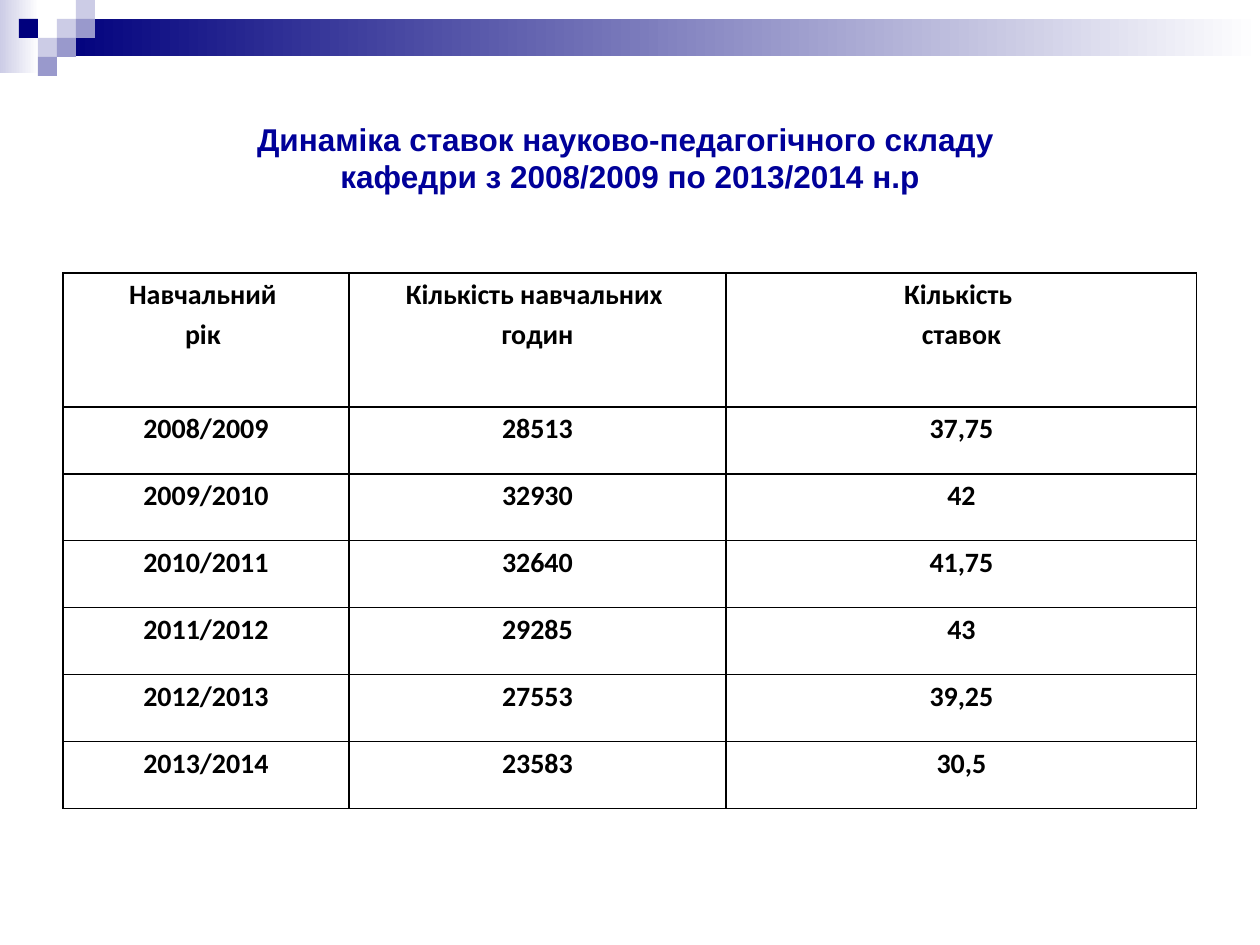
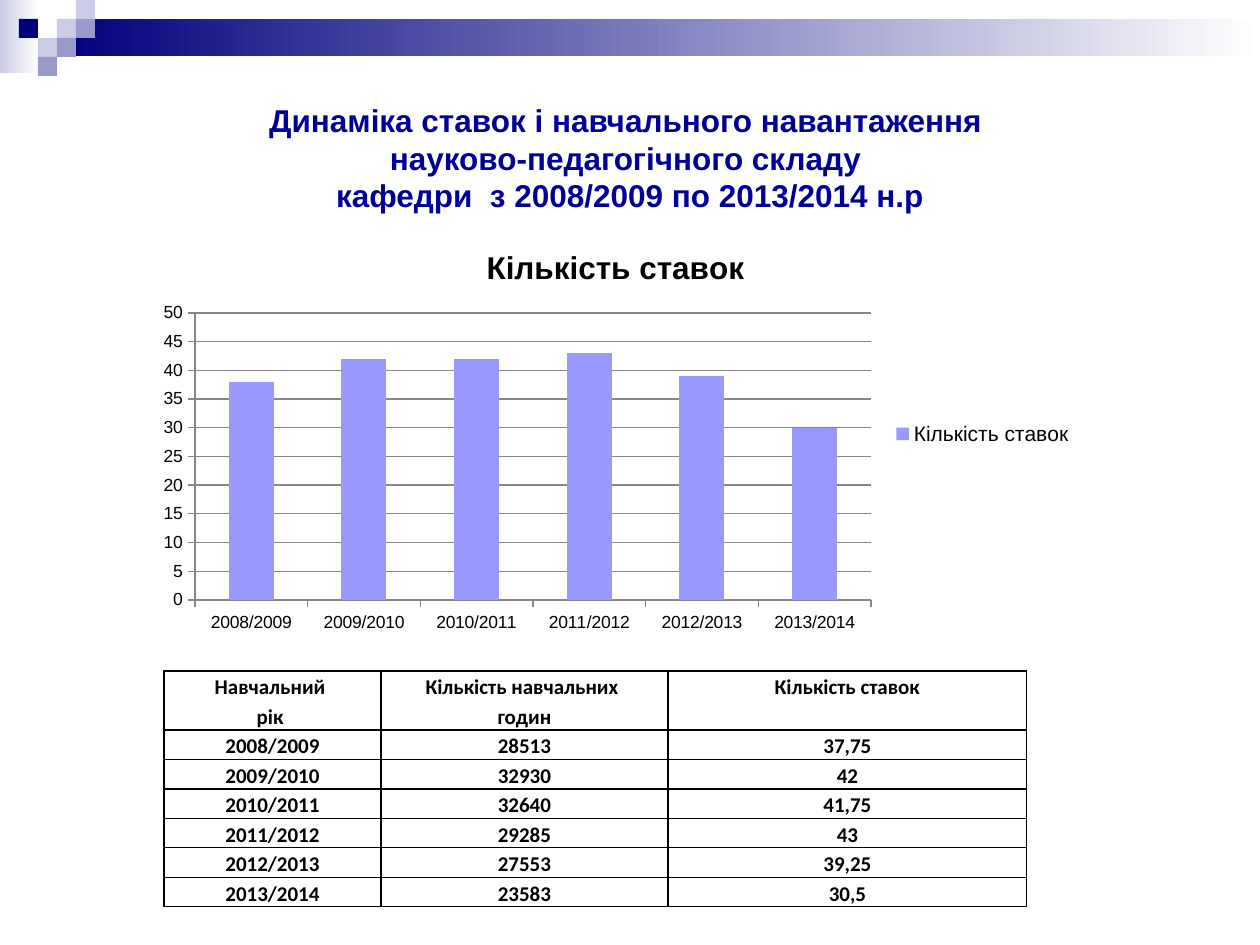
from pptx import Presentation, util as u
from pptx.chart.data import CategoryChartData
from pptx.dml.color import RGBColor
from pptx.enum import chart as ch, shapes, text
from pptx.oxml import parse_xml
from pptx.oxml.ns import nsdecls

PX = 914400 / 126
COLORS = {
    "white": "FFFFFF", "black": "000000", "navy": "00007D",
    "title": "000099", "pale": "CCCCE6", "mid": "9999CC",
    "bar": "9999FF", "grid": "868686",
}
UNIT = 19  # side of one square in the corner pattern
SQUARES = [  # column, row, colour
    (3, 1, "pale"), (4, 0, "pale"), (4, 1, "mid"), (2, 2, "pale"),
    (1, 1, "navy"), (3, 2, "mid"), (2, 3, "mid"),
]
YEARS = [
    ("2008/2009", "28513", "37,75"),
    ("2009/2010", "32930", "42"),
    ("2010/2011", "32640", "41,75"),
    ("2011/2012", "29285", "43"),
    ("2012/2013", "27553", "39,25"),
    ("2013/2014", "23583", "30,5"),
]
HEADS = [["Навчальний ", "рік "], ["Кількість навчальних ", "годин"]]
POSTS = [38, 42, 42, 43, 39, 30]
FRAME = (145, 226, 941, 416)  # chart
PLOT = (195, 313, 676, 287)  # inner plot area of the chart


def px(n):
    return u.Emu(round(n * PX))


def box(*sides):
    return [px(n) for n in sides]


def rgb(name):
    return RGBColor.from_string(COLORS[name])


def style(font, size, color, face="Arial", bold=False):
    font.name, font.size, font.bold = face, u.Pt(size), bold
    font.color.rgb = rgb(color)


def add_rect(slide, sides, color, fade=False):
    """Draw a rectangle, plain or fading to white at the right."""
    rect = slide.shapes.add_shape(shapes.MSO_SHAPE.RECTANGLE, *box(*sides))
    rect.shadow.inherit = False
    rect.line.fill.background()
    if fade:
        rect.fill.gradient()
        rect.fill.gradient_angle = 0
        for stop, name in zip(rect.fill.gradient_stops, (color, "white")):
            stop.color.rgb = rgb(name)
    else:
        rect.fill.solid()
        rect.fill.fore_color.rgb = rgb(color)


def add_band(slide):
    add_rect(slide, (0, 0, 39, 73), "pale", fade=True)
    add_rect(slide, (3 * UNIT, UNIT, 1203, 2 * UNIT - 1), "navy", fade=True)
    for col, row, color in SQUARES:
        add_rect(slide, (col * UNIT, row * UNIT, UNIT, UNIT), color)


def add_title(slide, lines):
    frame = slide.shapes.add_textbox(*box(63, 63, 1134, 189)).text_frame
    frame.word_wrap = True
    frame.vertical_anchor = text.MSO_ANCHOR.MIDDLE
    para = frame.paragraphs[0]
    para.alignment = text.PP_ALIGN.CENTER
    for i, line in enumerate(lines):
        if i:
            para.add_line_break()
        run = para.add_run()
        run.text = line
        style(run.font, 18, "title", bold=True)


def add_edges(cell):
    """Give a cell a thin black line on all four sides."""
    props = cell._tc.get_or_add_tcPr()
    for i, side in enumerate(("lnL", "lnR", "lnT", "lnB")):
        props.insert(i, parse_xml(
            f'<a:{side} {nsdecls("a")} w="{u.Pt(0.75)}"><a:solidFill>'
            f'<a:srgbClr val="{COLORS["black"]}"/></a:solidFill></a:{side}>'))


def fill_cell(cell, lines, size):
    cell.margin_left = cell.margin_right = px(9)
    cell.margin_top = cell.margin_bottom = 0
    cell.fill.background()
    add_edges(cell)
    frame = cell.text_frame
    for i, line in enumerate(lines):
        para = frame.add_paragraph() if i else frame.paragraphs[0]
        para.alignment = text.PP_ALIGN.CENTER
        para.line_spacing = 1.15
        run = para.add_run()
        run.text = line
        style(run.font, size, "black", "Calibri", True)


def add_table(slide, spot, widths, height, last, size):
    """Add the table of years; the header row is two rows high."""
    rows = [HEADS + [last]] + [[[item] for item in year] for year in YEARS]
    step = height / (len(rows) + 1)
    sides = (*spot, sum(widths), height)
    table = slide.shapes.add_table(len(rows), 3, *box(*sides)).table
    table.first_row = table.horz_banding = False
    for col, width in zip(table.columns, widths):
        col.width = px(width)
    for r, row in enumerate(rows):
        table.rows[r].height = px(step if r else 2 * step)
        for c, lines in enumerate(row):
            fill_cell(table.cell(r, c), lines, size)


def set_plot(chart):
    """Place the inner plot area, in shares of the chart frame."""
    left, top, width, height = FRAME
    x, y, w, h = PLOT
    parts = ((x - left) / width, (y - top) / height, w / width, h / height)
    area = chart._chartSpace.chart.plotArea
    for old in area.findall("{*}layout"):
        area.remove(old)
    spots = "".join(f'<c:{k} val="{v}"/>' for k, v in zip("xywh", parts))
    area.insert(0, parse_xml(
        f'<c:layout {nsdecls("c")}><c:manualLayout>'
        '<c:layoutTarget val="inner"/><c:xMode val="edge"/>'
        f'<c:yMode val="edge"/>{spots}</c:manualLayout></c:layout>'))


def add_chart(slide):
    name = "Кількість ставок"
    data = CategoryChartData()
    data.categories = [year[0] for year in YEARS]
    data.add_series(name, POSTS)
    chart = slide.shapes.add_chart(
        ch.XL_CHART_TYPE.COLUMN_CLUSTERED, *box(*FRAME), data).chart
    style(chart.font, 10, "black")

    chart.has_title = True
    run = chart.chart_title.text_frame.paragraphs[0].add_run()
    run.text = name
    style(run.font, 18, "black", bold=True)

    chart.has_legend = True
    chart.legend.position = ch.XL_LEGEND_POSITION.RIGHT
    chart.legend.include_in_layout = False
    style(chart.legend.font, 12, "black")

    plot = chart.plots[0]
    plot.vary_by_categories = False
    plot.gap_width = 150
    fill = plot.series[0].format.fill
    fill.solid()
    fill.fore_color.rgb = rgb("bar")

    value = chart.value_axis
    value.minimum_scale, value.maximum_scale, value.major_unit = 0, 50, 5
    value.has_major_gridlines = True
    for axis in (chart.category_axis, value):
        axis.major_tick_mark = ch.XL_TICK_MARK.OUTSIDE
    for part in (chart.category_axis, value, value.major_gridlines):
        part.format.line.color.rgb = rgb("grid")
        part.format.line.width = u.Pt(0.75)
    set_plot(chart)


def add_slide(deck, lines):
    slide = deck.slides.add_slide(deck.slide_layouts[6])
    add_band(slide)
    add_title(slide, lines)
    return slide


def main():
    deck = Presentation()
    deck.slide_width, deck.slide_height = box(1260, 945)

    staff = add_slide(deck, [
        "Динаміка ставок науково-педагогічного складу ",
        "кафедри з 2008/2009 по 2013/2014 н.р"])
    add_table(staff, (63, 273), (286, 377, 471), 536,
              ["Кількість ", "cтавок"], 16)

    load = add_slide(deck, [
        "Динаміка ставок і навчального навантаження ",
        "науково-педагогічного складу ",
        "кафедри  з 2008/2009 по 2013/2014 н.р"])
    add_chart(load)
    add_table(load, (164, 671), (217, 287, 359), 236,
              ["Кількість cтавок"], 12)

    deck.save("out.pptx")


if __name__ == "__main__":
    main()
